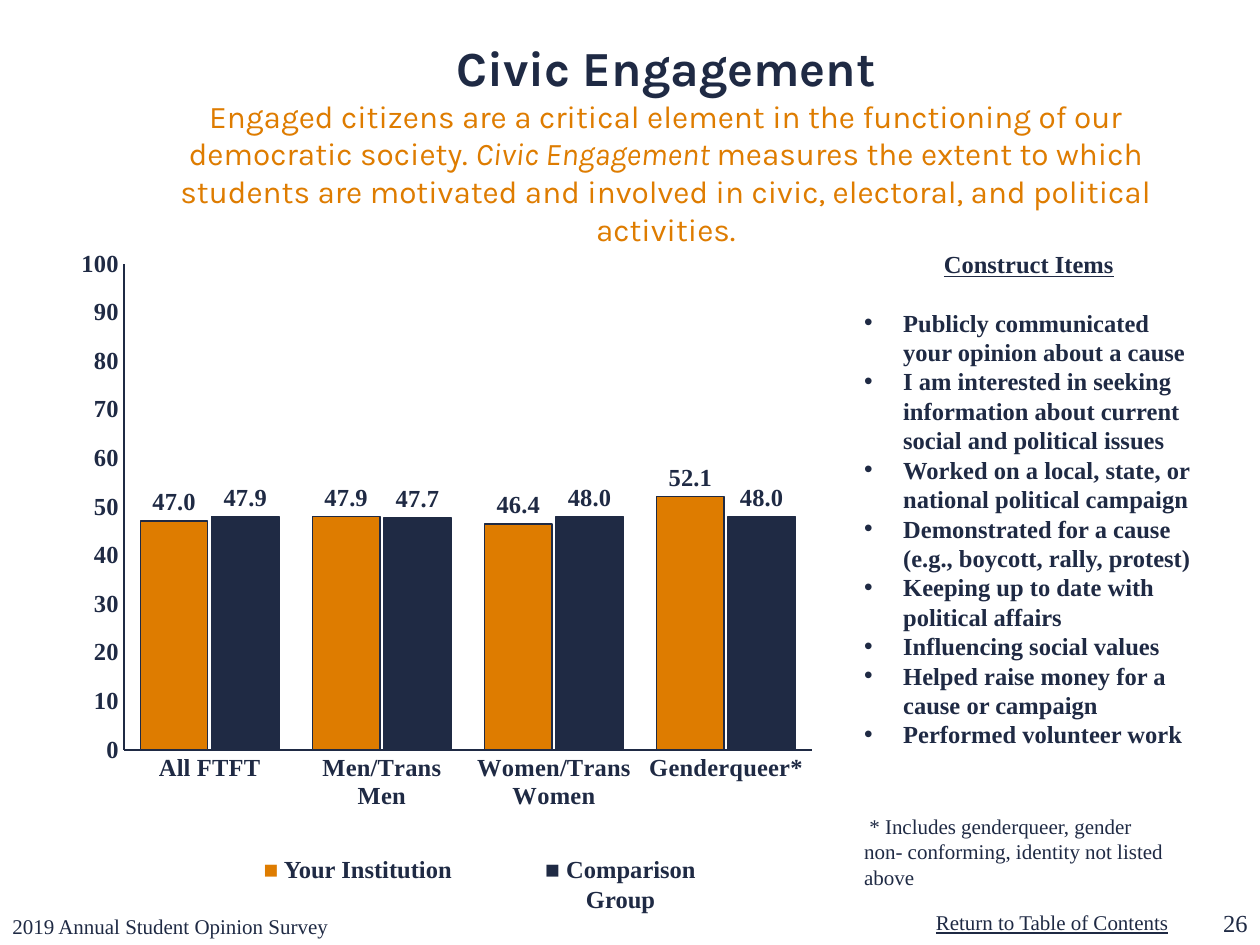
from lxml import etree
from pptx import Presentation
from pptx import util as u
from pptx.chart import data as chart_data
from pptx.dml import color as dml
from pptx.enum import chart as charts, text
from pptx.oxml import ns

COLORS = {"navy": "1F2A44", "orange": "DE7C00", "white": "FFFFFF"}
COLUMNS, ROWS = 100, 75
HEADING = {"size": u.Pt(14), "bold": True}
SMALL = {"size": u.Pt(12)}
CENTER = {"alignment": text.PP_ALIGN.CENTER}


class SlideBuilder:
    """Holds the style and the current slide, and adds elements on a grid."""

    def __init__(self, presentation, font="Times New Roman"):
        self.column = presentation.slide_width / COLUMNS
        self.row = presentation.slide_height / ROWS
        self.font = font
        self.slide = presentation.slides.add_slide(presentation.slide_layouts[6])
        self.paint(self.slide.background.fill, "white")

    def place(self, left, top, width, height):
        return [round(value) for value in (left * self.column, top * self.row,
                                           width * self.column, height * self.row)]

    def apply(self, target, values):
        for name, value in values.items():
            setattr(target, name, value)

    def rgb(self, name):
        return dml.RGBColor.from_string(COLORS[name])

    def paint(self, fill, name):
        fill.solid()
        fill.fore_color.rgb = self.rgb(name)

    def style_font(self, font, values, color="navy"):
        self.apply(font, {"name": self.font, **values})
        font.color.rgb = self.rgb(color)

    def add_run(self, paragraph, words, values, color="navy"):
        run = paragraph.add_run()
        run.text = words
        self.style_font(run.font, values, color)

    def add_text(self, box, runs, layout=None, anchor=text.MSO_ANCHOR.TOP):
        frame = self.slide.shapes.add_textbox(*self.place(*box)).text_frame
        self.apply(frame, {"word_wrap": True, "vertical_anchor": anchor})
        paragraph = frame.paragraphs[0]
        self.apply(paragraph, layout or {})
        for run in runs:
            self.add_run(paragraph, *run)
        return frame

    def add_title(self, box, title, subtitle):
        frame = self.add_text(box, [(title, {"name": "Karla", "size": u.Pt(28), "bold": True})], CENTER)
        paragraph = frame.paragraphs[0]
        paragraph.add_line_break()
        for words, italic in subtitle:
            self.add_run(paragraph, words, {"name": "Karla", "size": u.Pt(18), "italic": italic}, "orange")

    def add_bullets(self, box, heading, items, indent):
        frame = self.add_text(box, [(heading, {**HEADING, "underline": True})],
                              {**CENTER, "space_after": u.Pt(16.5)})
        for item in items:
            paragraph = frame.add_paragraph()
            properties = paragraph._p.get_or_add_pPr()
            properties.set("marL", str(u.Inches(indent)))
            properties.set("indent", str(-u.Inches(indent)))
            etree.SubElement(properties, ns.qn("a:buFont")).set("typeface", "Arial")
            etree.SubElement(properties, ns.qn("a:buChar")).set("char", "•")
            self.add_run(paragraph, item, HEADING)

    def add_chart(self, box, categories, series, plot_share):
        data = chart_data.CategoryChartData(number_format="0.0")
        data.categories = categories
        for name, values, _ in series:
            data.add_series(name, values)
        chart = self.slide.shapes.add_chart(
            charts.XL_CHART_TYPE.COLUMN_CLUSTERED, *self.place(*box), data).chart
        self.apply(chart, {"has_legend": False, "has_title": False})
        self.style_font(chart.font, HEADING)
        plot = chart.plots[0]
        self.apply(plot, {"gap_width": 50, "overlap": -6, "vary_by_categories": False,
                          "has_data_labels": True})
        self.apply(plot.data_labels, {
            "show_value": True, "number_format": "0.0", "number_format_is_linked": False,
            "position": charts.XL_LABEL_POSITION.OUTSIDE_END})
        self.style_font(plot.data_labels.font, HEADING)
        for bars, (_, _, color) in zip(plot.series, series):
            bars.invert_if_negative = False
            self.paint(bars.format.fill, color)
            self.paint(bars.format.line.fill, "navy")
            bars.format.line.width = u.Pt(0.75)
        self.apply(chart.value_axis, {"minimum_scale": 0, "maximum_scale": 100, "major_unit": 10})
        self.apply(chart.value_axis.tick_labels, {"number_format": "#,##0",
                                                  "number_format_is_linked": False})
        for axis in (chart.category_axis, chart.value_axis):
            self.apply(axis, {"has_major_gridlines": False,
                              "major_tick_mark": charts.XL_TICK_MARK.NONE,
                              "minor_tick_mark": charts.XL_TICK_MARK.NONE})
            self.style_font(axis.tick_labels.font, HEADING)
            self.paint(axis.format.line.fill, "navy")
            axis.format.line.width = u.Pt(1)
        self.set_plot_area(chart, plot_share)

    def set_plot_area(self, chart, share):
        area = chart._chartSpace.chart.plotArea
        for old in area.findall(ns.qn("c:layout")):
            area.remove(old)
        layout = etree.Element(ns.qn("c:layout"))
        area.insert(0, layout)
        manual = etree.SubElement(layout, ns.qn("c:manualLayout"))
        settings = [("layoutTarget", "inner"), ("xMode", "edge"), ("yMode", "edge"),
                    *zip("xywh", share)]
        for name, value in settings:
            etree.SubElement(manual, ns.qn(f"c:{name}")).set("val", str(value))


def main():
    presentation = Presentation()
    presentation.slide_width, presentation.slide_height = u.Inches(10), u.Inches(7.5)
    builder = SlideBuilder(presentation)
    bottom = text.MSO_ANCHOR.BOTTOM

    builder.add_text((73.3, 71.7, 20.7, 3),
                     [("Return to Table of Contents", {**SMALL, "underline": True})])
    builder.add_title((10, 2.5, 85.7, 12.5), "Civic Engagement", [
        ("Engaged citizens are a critical element in the functioning of our democratic society. ", False),
        ("Civic Engagement ", True),
        ("measures the extent to which students are motivated and involved in civic, "
         "electoral, and political activities.", False)])
    builder.add_text((0, 70, 31.7, 5), [("2019 Annual Student Opinion Survey", SMALL)], anchor=bottom)
    builder.add_text((95.8, 71.6, 4.2, 3.3), [("26", {"size": u.Pt(14)})],
                     {"alignment": text.PP_ALIGN.RIGHT}, bottom)

    builder.add_chart(
        (1.7, 16.4, 96.7, 49.1),
        ["All FTFT", "Men/Trans Men", "Women/Trans Women", "Genderqueer*"],
        [("Series 1", (47.0, 47.9, 46.4, 52.1), "orange"),
         ("Series 2", (47.9, 47.7, 48.0, 48.0), "navy")],
        (0.084, 0.092, 0.565, 0.786))
    for left, width, color, label in ((19.7, 17.4, "orange", " Your Institution"),
                                      (39.4, 19.7, "navy", " Comparison Group")):
        builder.add_text((left, 67.3, width, 3.4),
                         [("■", HEADING, color), (label, HEADING)], CENTER)

    builder.add_bullets((67.6, 19.3, 28.1, 43.3), "Construct Items", [
        "Publicly communicated your opinion about a cause",
        "I am interested in seeking information about current social and political issues",
        "Worked on a local, state, or national political campaign",
        "Demonstrated for a cause (e.g., boycott, rally, protest)",
        "Keeping up to date with political affairs",
        "Influencing social values",
        "Helped raise money for a cause or campaign",
        "Performed volunteer work"], indent=0.31)
    builder.add_text((67.6, 64.1, 26.7, 5), [
        (" * Includes genderqueer, gender non- conforming, identity not listed above", SMALL)])

    presentation.save("out.pptx")


if __name__ == "__main__":
    main()
